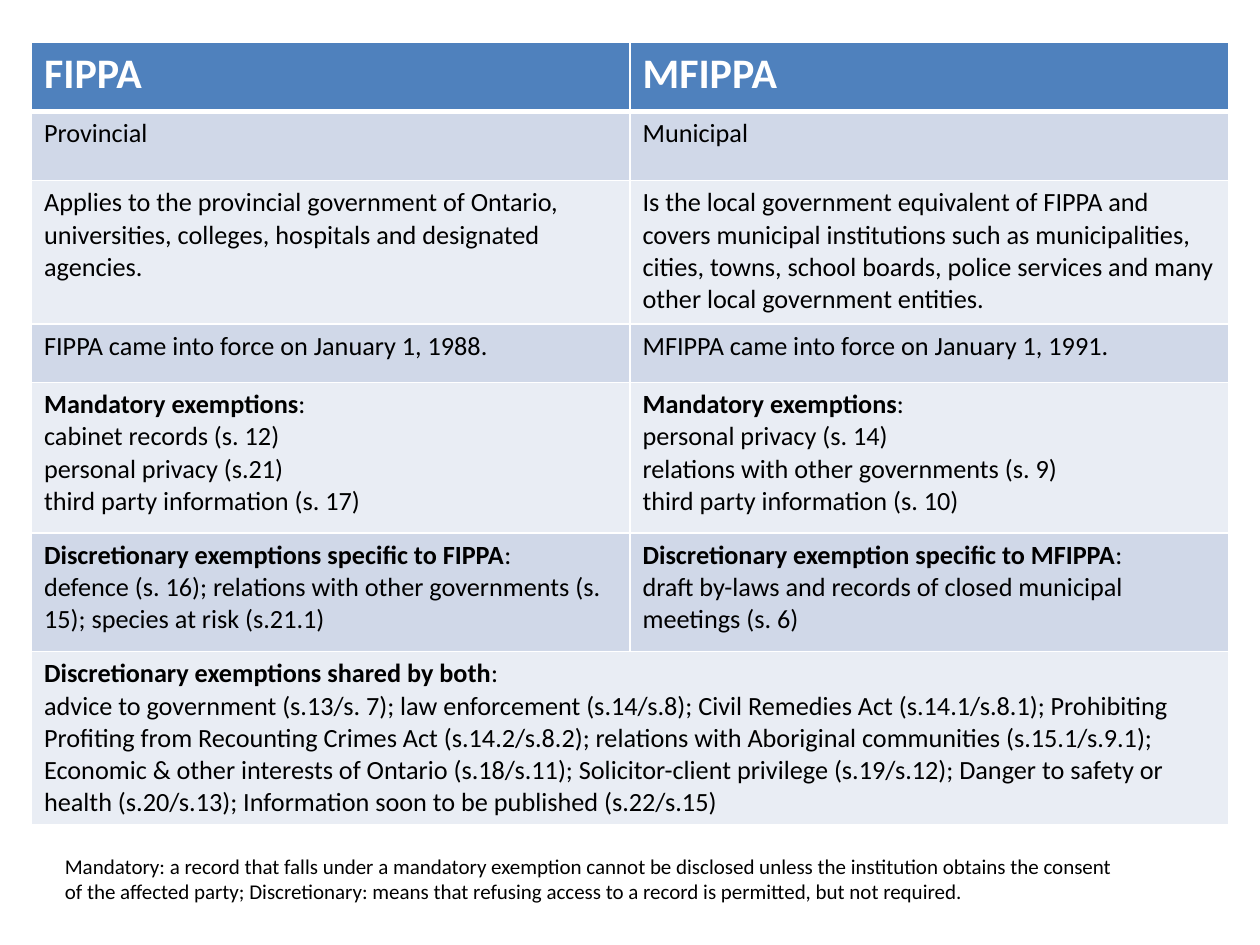
import pptx
import pptx.util
import pptx.dml.color
import pptx.oxml
import pptx.oxml.ns

Pt = pptx.util.Pt

ROWS = [
    (39.6, "FIPPA", "MFIPPA"),
    (39.6, "Provincial", "Municipal"),
    (82, "Applies to the provincial government of Ontario, universities, colleges, "
         "hospitals and designated agencies.",
     "Is the local government equivalent of FIPPA and covers municipal institutions such as "
     "municipalities, cities, towns, school boards, police services and many other local "
     "government entities."),
    (33.4, "FIPPA came into force on January 1, 1988.",
     "MFIPPA came into force on January 1, 1991."),
    (86, ("Mandatory exemptions", "cabinet records (s. 12)", "personal privacy (s.21)",
          "third party information (s. 17)"),
     ("Mandatory exemptions", "personal privacy (s. 14)",
      "relations with other governments (s. 9)", "third party information (s. 10)")),
    (67.8, ("Discretionary exemptions specific to FIPPA",
            "defence (s. 16); relations with other governments (s. 15); species at risk (s.21.1)"),
     ("Discretionary exemption specific to MFIPPA",
      "draft by-laws and records of closed municipal meetings (s. 6)")),
    (96, ("Discretionary exemptions shared by both",
          "advice to government (s.13/s. 7); law enforcement (s.14/s.8); Civil Remedies Act "
          "(s.14.1/s.8.1); Prohibiting Profiting from Recounting Crimes Act (s.14.2/s.8.2); "
          "relations with Aboriginal communities (s.15.1/s.9.1); Economic & other interests of "
          "Ontario (s.18/s.11); Solicitor-client privilege (s.19/s.12); Danger to safety or "
          "health (s.20/s.13); Information soon to be published (s.22/s.15)"), ""),
]
FOOTNOTE = ("Mandatory: a record that falls under a mandatory exemption cannot be disclosed unless "
            "the institution obtains the consent of the affected party; Discretionary: means that "
            "refusing access to a record is permitted, but not required.")


def color(value):
    """Return the colour for a hex string."""
    return pptx.dml.color.RGBColor.from_string(value)


def format_runs(paragraph, size, value, bold=False):
    """Give every run of a paragraph the same font."""
    for run in paragraph.runs:
        run.font.name = "Calibri"
        run.font.size = Pt(size)
        run.font.bold = bold
        run.font.color.rgb = color(value)


def set_borders(cell, top, bottom):
    """Draw white borders of the given widths, with thin sides."""
    properties = cell._tc.get_or_add_tcPr()
    for side, width in (("L", 1), ("R", 1), ("T", top), ("B", bottom)):
        properties.append(pptx.oxml.parse_xml(
            f'<a:ln{side} {pptx.oxml.ns.nsdecls("a")} w="{Pt(width)}"><a:solidFill>'
            f'<a:srgbClr val="FFFFFF"/></a:solidFill></a:ln{side}>'))


def fill_cell(cell, content, row):
    """Write a cell as plain text or as a bold heading with lines below."""
    set_borders(cell, 3 if row == 1 else 1, 3 if row == 0 else 1)
    cell.fill.solid()
    cell.fill.fore_color.rgb = color("4F81BD" if row == 0 else ("E9EDF4", "D0D8E8")[row % 2])
    paragraph = cell.text_frame.paragraphs[0]
    if isinstance(content, str):
        paragraph.text = content
        format_runs(paragraph, *((24, "FFFFFF", True) if row == 0 else (15, "000000")))
        return
    heading, *lines = content
    paragraph.add_run().text = heading
    paragraph.add_run().text = ":"
    for line in lines:
        paragraph.add_line_break()
        paragraph.add_run().text = line
    format_runs(paragraph, 15, "000000")
    paragraph.runs[0].font.bold = True


def add_comparison(slide, left, top, width):
    """Place the comparison table, whose last row spans both columns."""
    height = sum(row[0] for row in ROWS)
    table = slide.shapes.add_table(
        len(ROWS), 2, Pt(left), Pt(top), Pt(width), Pt(height)).table
    for index, (row_height, *contents) in enumerate(ROWS):
        table.rows[index].height = Pt(row_height)
        for column, content in enumerate(contents):
            fill_cell(table.cell(index, column), content, index)
    last = len(ROWS) - 1
    table.cell(last, 0).merge(table.cell(last, 1))


def add_footnote(slide, left, top, width, height):
    """Place the note that explains the two kinds of exemption."""
    frame = slide.shapes.add_textbox(Pt(left), Pt(top), Pt(width), Pt(height)).text_frame
    frame.word_wrap = True
    frame.text = FOOTNOTE
    format_runs(frame.paragraphs[0], 12, "000000")


def main():
    """Build the slide and save it."""
    presentation = pptx.Presentation()
    presentation.slide_width, presentation.slide_height = Pt(720), Pt(540)
    slide = presentation.slides.add_slide(presentation.slide_layouts[6])
    add_comparison(slide, 18, 24, 684)
    add_footnote(slide, 30, 484, 618, 40)
    presentation.save("out.pptx")


if __name__ == "__main__":
    main()
